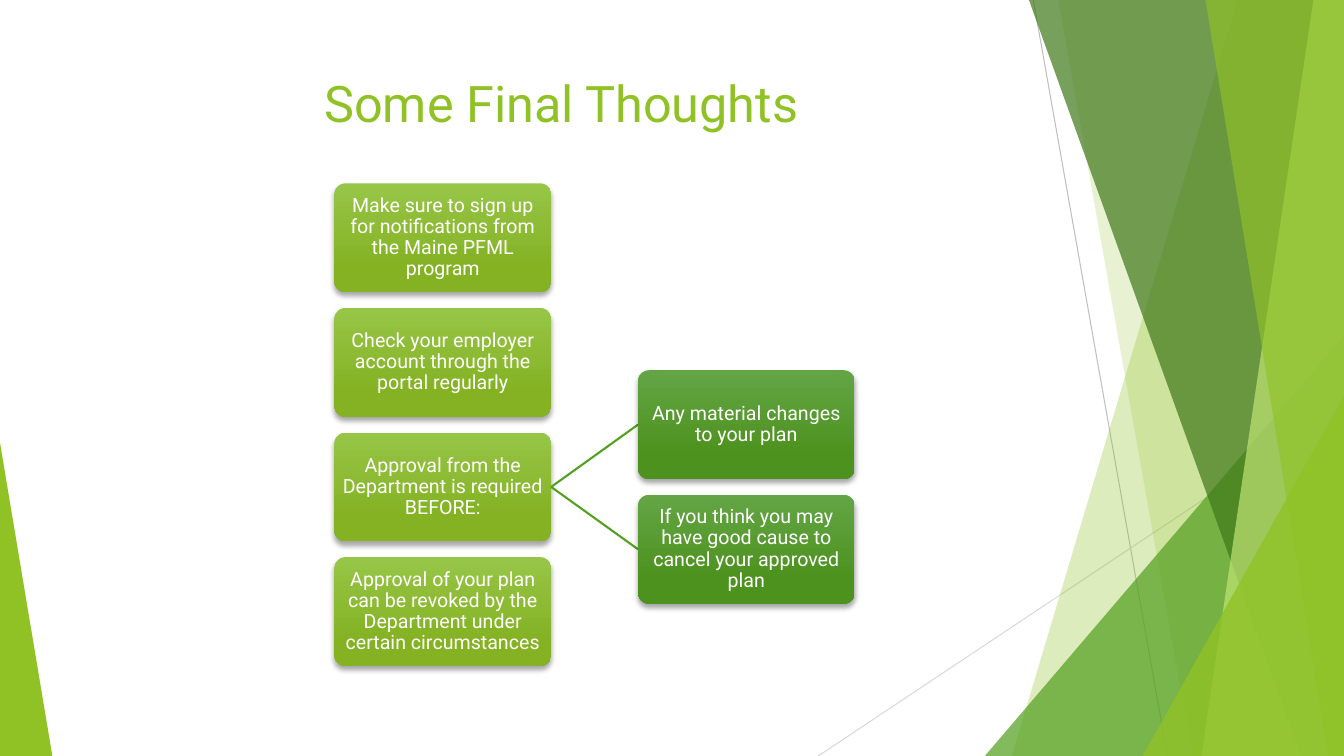
from lxml.etree import SubElement
from pptx import Presentation
from pptx.dml.color import RGBColor
from pptx.enum.shapes import MSO_CONNECTOR, MSO_SHAPE
from pptx.enum.text import MSO_ANCHOR, PP_ALIGN
from pptx.oxml.ns import qn
from pptx.util import Cm, Pt

WIDTH, HEIGHT = 33.87, 19.05
COLORS = {
    "lime": "90C226", "green": "54A021", "forest": "3F7819", "pale": "C0E474",
    "grey": "BFBFBF", "silver": "D9D9D9", "white": "FFFFFF", "black": "000000",
}
GRADIENTS = {"lime": ("97C547", "84B223"), "green": ("63A545", "4D921E")}
TITLE_FONT = {"name": "Roboto", "size": Pt(36)}
CARD_FONT = {"name": "Roboto", "size": Pt(14)}
CARD_FRAME = {
    "word_wrap": True, "vertical_anchor": MSO_ANCHOR.MIDDLE,
    "margin_left": Cm(0.11), "margin_right": Cm(0.11),
    "margin_top": Cm(0.11), "margin_bottom": Cm(0.11),
}
CARD_PARAGRAPH = {"alignment": PP_ALIGN.CENTER, "line_spacing": 0.9}
CARD_WIDTH, CARD_HEIGHT, CARD_PITCH, COLUMN_PITCH = 5.46, 2.74, 3.14, 7.65
BRANCHING_ROW = 2
STEPS = [
    "Make sure to sign up for notifications from the Maine PFML program",
    "Check your employer account through the portal regularly",
    "Approval from the Department is required BEFORE:",
    "Approval of your plan can be revoked by the Department under certain circumstances",
]
CONDITIONS = [
    "Any material changes to your plan",
    "If you think you may have good cause to cancel your approved plan",
]


def apply_format(target, values):
    """Set every attribute named in values on the target."""
    for name, value in values.items():
        setattr(target, name, value)


def set_font(font, values, color):
    """Format a font and colour it."""
    apply_format(font, values)
    font.color.rgb = RGBColor.from_string(COLORS[color])


def fill_shape(shape, color, opacity=100):
    """Fill a shape with a plain colour, without line or shadow."""
    shape.shadow.inherit = False
    shape.line.fill.background()
    shape.fill.solid()
    shape.fill.fore_color.rgb = RGBColor.from_string(COLORS[color])
    if opacity < 100:
        color_element = shape._element.spPr.find(qn("a:solidFill"))[0]
        SubElement(color_element, qn("a:alpha"), val=str(opacity * 1000))


def add_line(slide, start, end, color, width):
    """Draw a straight line between two points."""
    points = [Cm(value) for value in (*start, *end)]
    line = slide.shapes.add_connector(MSO_CONNECTOR.STRAIGHT, *points)
    line.line.color.rgb = RGBColor.from_string(COLORS[color])
    line.line.width = Pt(width)
    SubElement(line._element.spPr, qn("a:effectLst"))


def add_panel(slide, box, top_x, bottom_x, color, opacity):
    """Draw a slanted panel that reaches the right edge of the box."""
    left, top, width, height = box
    right, bottom = left + width, top + height
    corners = [(top_x, top), (right, top), (right, bottom), (bottom_x, bottom)]
    points = [(Cm(x), Cm(y)) for x, y in corners]
    builder = slide.shapes.build_freeform(*points[0])
    builder.add_line_segments(points[1:], close=True)
    fill_shape(builder.convert_to_shape(), color, opacity)


def add_triangle(slide, box, apex, color, opacity=100):
    """Draw a triangle whose apex lies at a share of the box width."""
    lengths = [Cm(value) for value in box]
    triangle = slide.shapes.add_shape(MSO_SHAPE.ISOSCELES_TRIANGLE, *lengths)
    triangle.adjustments[0] = apex
    fill_shape(triangle, color, opacity)


def add_facets(slide, box):
    """Draw the layered facets along the sides of the box."""
    left, top, width, height = box
    right, bottom = left + width, top + height
    add_line(slide, (26.04, top), (29.42, bottom), "grey", 0.75)
    add_line(slide, (right, 10.23), (20.62, bottom), "silver", 0.75)
    add_panel(slide, box, 31.19, 25.5, "lime", 30)
    add_panel(slide, box, 26.67, 30.05, "lime", 20)
    add_triangle(slide, (24.82, 8.46, right - 24.82, bottom - 8.46), 1, "green", 72)
    add_panel(slide, box, 25.93, 32.79, "forest", 70)
    add_panel(slide, box, 33.1, 30.28, "pale", 70)
    add_panel(slide, box, 30.38, 33.48, "lime", 65)
    add_triangle(slide, (28.8, 9.98, right - 28.8, bottom - 9.98), 1, "lime", 80)
    add_triangle(slide, (left, 11.15, 1.32, bottom - 11.15), 0, "lime")


def add_title(slide, box, text):
    """Place and format the title placeholder."""
    title = slide.shapes.title
    apply_format(title, dict(zip(("left", "top", "width", "height"), map(Cm, box))))
    title.text_frame.text = text
    title.text_frame.vertical_anchor = MSO_ANCHOR.TOP
    paragraph = title.text_frame.paragraphs[0]
    paragraph.alignment = PP_ALIGN.LEFT
    set_font(paragraph.runs[0].font, TITLE_FONT, "lime")


def add_card(slide, left, top, text, color):
    """Draw a rounded card with a gradient, a soft shadow and centred text."""
    card = slide.shapes.add_shape(
        MSO_SHAPE.ROUNDED_RECTANGLE,
        Cm(left), Cm(top), Cm(CARD_WIDTH), Cm(CARD_HEIGHT))
    card.adjustments[0] = 0.1
    card.line.fill.background()
    card.fill.gradient()
    card.fill.gradient_angle = 270
    for stop, shade, position in zip(card.fill.gradient_stops, GRADIENTS[color], (0, 0.78)):
        stop.color.rgb = RGBColor.from_string(shade)
        stop.position = position
    card.shadow.inherit = False
    effects = card._element.spPr.find(qn("a:effectLst"))
    shadow = SubElement(
        effects, qn("a:outerShdw"), blurRad=str(Pt(4)), dist=str(Pt(3)),
        dir="5400000", rotWithShape="0")
    shade = SubElement(shadow, qn("a:srgbClr"), val=COLORS["black"])
    SubElement(shade, qn("a:alpha"), val="35000")
    apply_format(card.text_frame, CARD_FRAME)
    card.text_frame.text = text
    paragraph = card.text_frame.paragraphs[0]
    apply_format(paragraph, CARD_PARAGRAPH)
    set_font(paragraph.runs[0].font, CARD_FONT, "white")


def add_thought_tree(slide, left, top):
    """Draw the column of steps and the conditions that branch from one of them."""
    for row, text in enumerate(STEPS):
        add_card(slide, left, top + row * CARD_PITCH, text, "lime")
    branch_top = top + BRANCHING_ROW * CARD_PITCH
    start = (left + CARD_WIDTH, branch_top + CARD_HEIGHT / 2)
    condition_left = left + COLUMN_PITCH
    for row, text in enumerate(CONDITIONS):
        card_top = branch_top + (row - (len(CONDITIONS) - 1) / 2) * CARD_PITCH
        add_line(slide, start, (condition_left, card_top + CARD_HEIGHT / 2), "green", 1.5)
        add_card(slide, condition_left, card_top, text, "green")


def main():
    """Build the slide and save it."""
    presentation = Presentation()
    presentation.slide_width, presentation.slide_height = Cm(WIDTH), Cm(HEIGHT)
    slide = presentation.slides.add_slide(presentation.slide_layouts[5])
    add_facets(slide, (0, 0, WIDTH, HEIGHT))
    add_title(slide, (7.92, 1.7, 17.86, 3.66), "Some Final Thoughts")
    add_thought_tree(slide, 8.43, 4.62)
    presentation.save("out.pptx")


if __name__ == "__main__":
    main()
